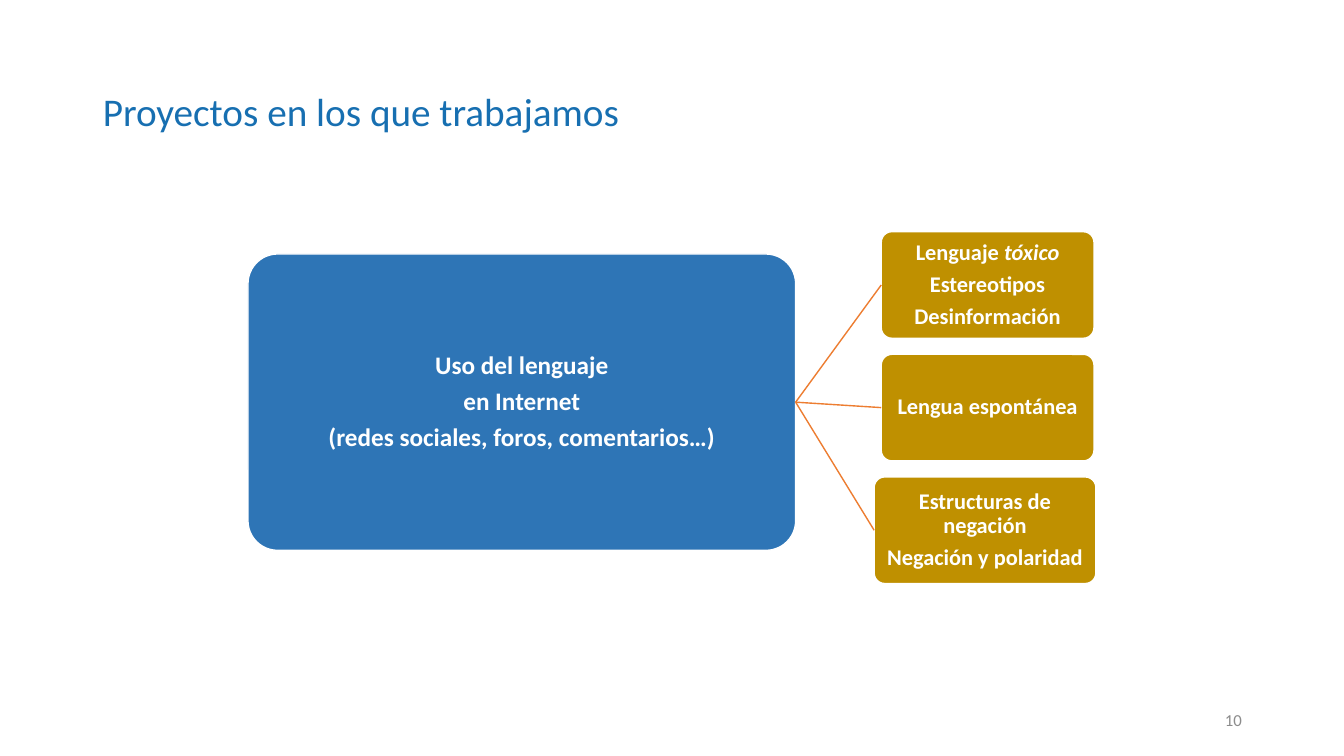
from pptx import Presentation
from pptx.dml.color import RGBColor
from pptx.enum.shapes import MSO_CONNECTOR, MSO_SHAPE
from pptx.enum.text import MSO_ANCHOR, PP_ALIGN
from pptx.oxml.ns import qn
from pptx.util import Inches, Pt
from lxml.etree import SubElement

FONT = "Calibri"
TITLE_BLUE, ROOT_BLUE, GOLD = "176FB1", "2E75B6", "BF9000"
ORANGE, WHITE, GREY = "ED7D31", "FFFFFF", "8C8C8C"


def color(hex_string):
    return RGBColor.from_string(hex_string)


class DiagramSlide:
    """Draws on one slide; places are percentages of its width and height."""

    def __init__(self, presentation):
        self.column = presentation.slide_width / 100
        self.row = presentation.slide_height / 100
        self.slide = presentation.slides.add_slide(presentation.slide_layouts[5])

    def box(self, left, top, width, height):
        return (round(left * self.column), round(top * self.row),
                round(width * self.column), round(height * self.row))

    def set_text(self, shape, lines, size, hex_string, alignment, bold=False):
        """Fill a shape with paragraphs; the part after an asterisk is italic."""
        text_frame = shape.text_frame
        text_frame.word_wrap = True
        text_frame.vertical_anchor = MSO_ANCHOR.MIDDLE
        text_frame.text = "\n".join(line.split("*")[0] for line in lines)
        for paragraph, line in zip(text_frame.paragraphs, lines):
            for piece in line.split("*")[1:]:
                paragraph.add_run().text = piece
            paragraph.alignment = alignment
            paragraph.line_spacing = 0.9
            for index, run in enumerate(paragraph.runs):
                run.font.name = FONT
                run.font.size = Pt(size)
                run.font.bold = bold
                run.font.italic = index % 2 == 1
                run.font.color.rgb = color(hex_string)

    def title(self, text, *place):
        title = self.slide.shapes.title
        title.left, title.top, title.width, title.height = self.box(*place)
        self.set_text(title, [text], 28, TITLE_BLUE, PP_ALIGN.LEFT)

    def page_number(self, text, *place):
        text_box = self.slide.shapes.add_textbox(*self.box(*place))
        self.set_text(text_box, [text], 12, GREY, PP_ALIGN.RIGHT)

    def node(self, lines, size, fill, *place):
        node = self.slide.shapes.add_shape(
            MSO_SHAPE.ROUNDED_RECTANGLE, *self.box(*place))
        node.adjustments[0] = 0.1
        node.shadow.inherit = False
        node.fill.solid()
        node.fill.fore_color.rgb = color(fill)
        node.line.color.rgb = color(WHITE)
        node.line.width = Pt(1)
        text_frame = node.text_frame
        text_frame.margin_left = text_frame.margin_right = Inches(0.01)
        text_frame.margin_top = text_frame.margin_bottom = Inches(0.01)
        self.set_text(node, lines, size, WHITE, PP_ALIGN.CENTER, bold=True)
        for paragraph in text_frame.paragraphs:
            paragraph.space_after = Pt(0.35 * size)
        return node

    def link(self, parent, child):
        """Join the right side of the parent to the left side of the child."""
        connector = self.slide.shapes.add_connector(MSO_CONNECTOR.STRAIGHT, 0, 0, 0, 0)
        connector.begin_connect(parent, 3)
        connector.end_connect(child, 1)
        connector.line.color.rgb = color(ORANGE)
        connector.line.width = Pt(1)
        SubElement(connector._element.spPr, qn("a:effectLst"))


def main():
    presentation = Presentation()
    presentation.slide_width = Inches(13.33)
    presentation.slide_height = Inches(7.5)
    diagram = DiagramSlide(presentation)

    diagram.title("Proyectos en los que trabajamos", 6.9, 5.33, 86.25, 19.33)
    language_use = diagram.node(
        ["Uso del lenguaje", "en Internet", "(redes sociales, foros, comentarios…)"],
        18, ROOT_BLUE, 18.45, 33.6, 40.75, 39.2)

    branches = [
        (["Lenguaje* tóxico", "Estereotipos", "Desinformación"], 65.57, 15.83),
        (["Lengua espontánea"], 65.57, 15.83),
        (["Estructuras de negación", "Negación y polaridad"], 65.04, 16.5),
    ]
    for index, (lines, left, width) in enumerate(branches):
        branch = diagram.node(lines, 16, GOLD, left, 30.65 + 16.22 * index, width, 14.1)
        diagram.link(language_use, branch)

    diagram.page_number("10", 70.65, 92.67, 22.5, 5.33)
    presentation.save("out.pptx")


if __name__ == "__main__":
    main()
